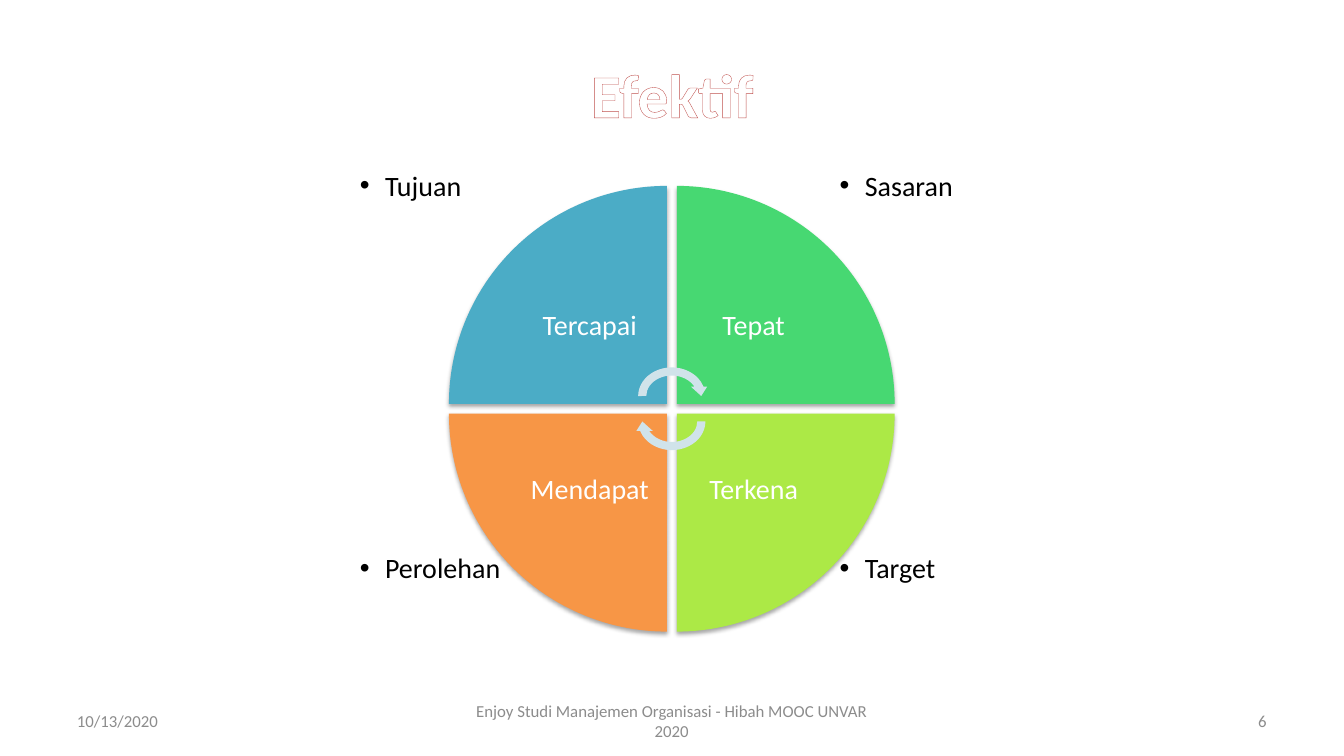
from lxml import etree
from pptx import Presentation
from pptx.dml.color import RGBColor
from pptx.enum.shapes import MSO_SHAPE
from pptx.enum.text import MSO_ANCHOR, PP_ALIGN
from pptx.oxml.ns import qn
from pptx.util import Cm, Pt

"""Build the slide on the four parts of being effective."""

WEDGE, ARROW = MSO_SHAPE.PIE_WEDGE, MSO_SHAPE.CIRCULAR_ARROW
TOP, MIDDLE = MSO_ANCHOR.TOP, MSO_ANCHOR.MIDDLE
LEFT, CENTER, RIGHT = PP_ALIGN.LEFT, PP_ALIGN.CENTER, PP_ALIGN.RIGHT

COLORS = {
    "white": "FFFFFF", "black": "000000", "gray": "8C8C8C", "red": "C0504D",
    "blue": "4BACC6", "green": "47D872", "lime": "ACE946",
    "orange": "F79646", "pale": "D0E3EA",
}
TITLE = "Efektif"
PARTS = [
    ("Tercapai", "Tujuan", "blue", -1, -1),
    ("Tepat", "Sasaran", "green", 1, -1),
    ("Terkena", "Target", "lime", 1, 1),
    ("Mendapat", "Perolehan", "orange", -1, 1),
]
FOOTER = [
    ("10/13/2020", 1.69, 7.9, LEFT),
    ("Enjoy Studi Manajemen Organisasi - Hibah MOOC UNVAR 2020", 11.57, 10.72, CENTER),
    ("6", 24.27, 7.9, RIGHT),
]
MID_X, MID_Y = 16.93, 10.3
HALF_GAP, RADIUS, LABEL = 0.125, 5.49, 3.88
NOTE_W, NOTE_H, NOTE_X, NOTE_Y = 4.19, 2.87, 8.14, 6.25
ARROW_W, ARROW_H, ARROW_SHIFT = 1.9, 1.65, 0.32


def rgb(name):
    return RGBColor.from_string(COLORS[name])


def child(parent, tag, **attrs):
    return etree.SubElement(parent, qn(tag), attrs)


def start(mid, side, reach, size):
    return mid - reach if side < 0 else mid + reach - size


def add_text(slide, text, box, size, color, align, anchor=MIDDLE, inset=None, spacing=None):
    frame = slide.shapes.add_textbox(*map(Cm, box)).text_frame
    frame.word_wrap = True
    frame.vertical_anchor = anchor
    if inset is not None:
        frame.margin_left = frame.margin_right = Cm(inset)
        frame.margin_top = frame.margin_bottom = Cm(inset)
    para = frame.paragraphs[0]
    para.alignment = align
    para.line_spacing = spacing
    run = para.add_run()
    run.text = text
    run.font.name = "Calibri"
    run.font.size = Pt(size)
    run.font.color.rgb = rgb(color)
    return para


def add_shape(slide, kind, box, color, turn):
    shape = slide.shapes.add_shape(kind, *map(Cm, box))
    shape.rotation = turn
    shape.fill.solid()
    shape.fill.fore_color.rgb = rgb(color)
    shape.line.fill.background()
    shape.shadow.inherit = False
    return shape


def add_title(slide):
    para = add_text(slide, TITLE, (1.7, 0.76, 30.48, 3.18), 44, "white", CENTER)
    font = para.runs[0].font
    font.bold = True
    props = para.runs[0]._r.get_or_add_rPr()
    line = child(props, "a:ln", w=str(Pt(0.52)))
    child(child(line, "a:solidFill"), "a:srgbClr", val=COLORS["red"])
    props.insert(0, line)


def add_note(slide, text, side_x, side_y):
    box = (start(MID_X, side_x, NOTE_X, NOTE_W), start(MID_Y, side_y, NOTE_Y, NOTE_H),
           NOTE_W, NOTE_H)
    para = add_text(slide, text, box, 20, "black", LEFT, TOP, 0.28, 0.9)
    props = para._p.get_or_add_pPr()
    props.set("marL", str(Cm(0.635)))
    props.set("indent", str(-Cm(0.635)))
    child(props, "a:buFont", typeface="Arial")
    child(props, "a:buChar", char="•")


def add_part(slide, text, color, side_x, side_y, turn):
    def square(size):
        reach = HALF_GAP + size
        return start(MID_X, side_x, reach, size), start(MID_Y, side_y, reach, size), size, size

    wedge = add_shape(slide, WEDGE, square(RADIUS), color, turn)
    effects = wedge._element.spPr.find(qn("a:effectLst"))
    shadow = child(effects, "a:outerShdw", blurRad=str(Pt(3.1)), dist=str(Pt(1.8)),
                   dir="5400000", rotWithShape="0")
    tint = child(shadow, "a:srgbClr", val=COLORS["black"])
    child(tint, "a:alpha", val="35000")
    add_text(slide, text, square(LABEL), 20, "white", CENTER, MIDDLE, 0.4, 0.9)


def main():
    deck = Presentation()
    deck.slide_width, deck.slide_height = Cm(33.87), Cm(19.05)
    slide = deck.slides.add_slide(deck.slide_layouts[6])
    add_title(slide)
    for text, left, width, align in FOOTER:
        add_text(slide, text, (left, 17.65, width, 1.01), 12, "gray", align)
    for _, note, _, side_x, side_y in PARTS:
        add_note(slide, note, side_x, side_y)
    for step, (label, _, color, side_x, side_y) in enumerate(PARTS):
        add_part(slide, label, color, side_x, side_y, 90 * step)
    for side, turn in ((-1, 0), (1, 180)):
        top = MID_Y + side * ARROW_SHIFT - ARROW_H / 2
        add_shape(slide, ARROW, (MID_X - ARROW_W / 2, top, ARROW_W, ARROW_H), "pale", turn)
    deck.save("out.pptx")


if __name__ == "__main__":
    main()
